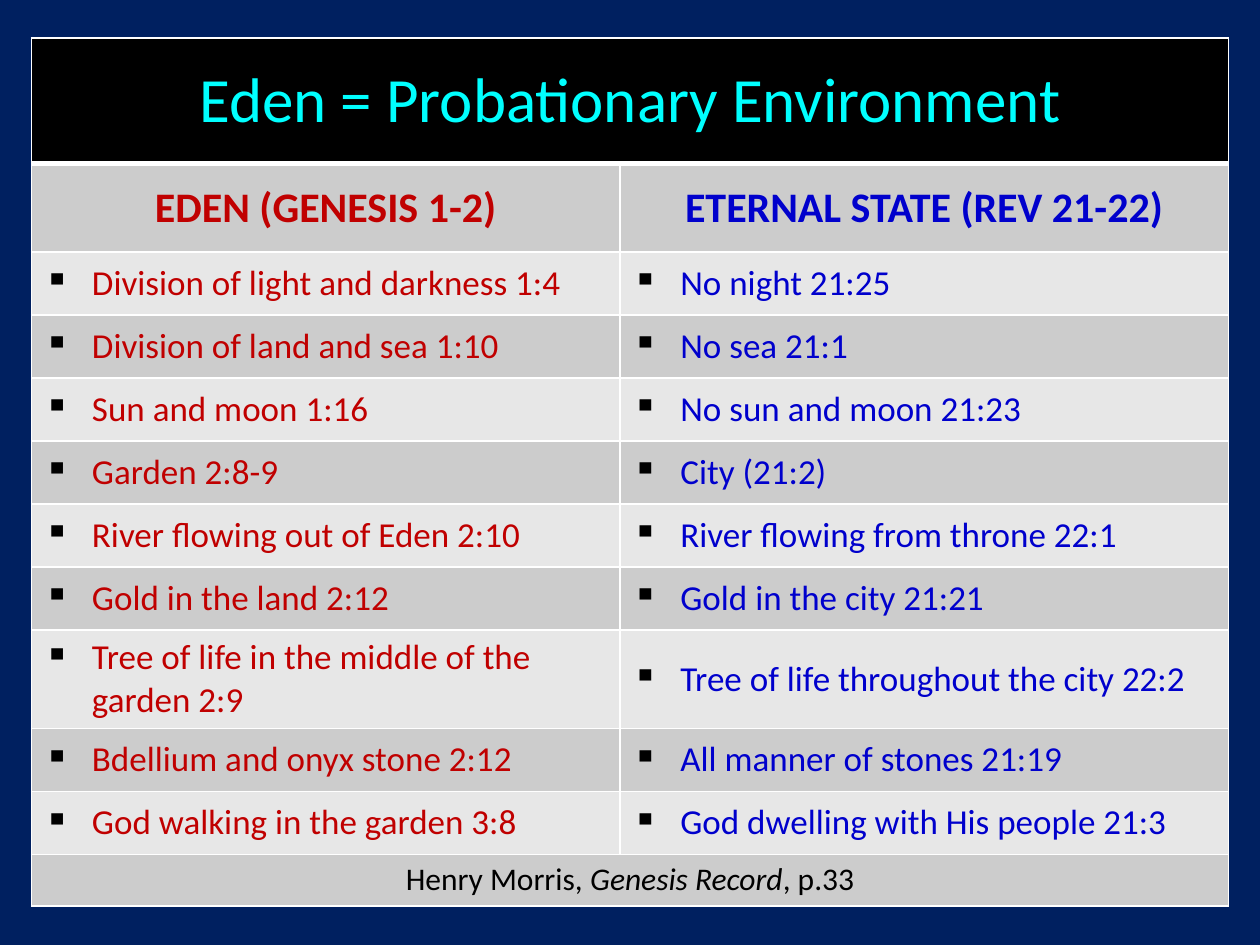
import pptx
import pptx.util
import pptx.dml.color
import pptx.enum.text
from lxml import etree
from pptx.oxml.ns import qn

Inches, Pt = pptx.util.Inches, pptx.util.Pt
ALIGN = pptx.enum.text.PP_ALIGN
MIDDLE = pptx.enum.text.MSO_ANCHOR.MIDDLE

# Content
TITLE = "Eden = Probationary Environment"
HEADS = ("EDEN (GENESIS 1-2)", "ETERNAL STATE (REV 21-22)")
PAIRS = [
    ("Division of light and darkness 1:4", "No night 21:25"),
    ("Division of land and sea 1:10", "No sea 21:1"),
    ("Sun and moon 1:16", "No sun and moon 21:23"),
    ("Garden 2:8-9", "City (21:2)"),
    ("River flowing out of Eden 2:10", "River flowing from throne 22:1"),
    ("Gold in the land 2:12", "Gold in the city 21:21"),
    ("Tree of life in the middle of the garden 2:9",
     "Tree of life throughout the city 22:2"),
    ("Bdellium and onyx stone 2:12", "All manner of stones 21:19"),
    ("God walking in the garden 3:8", "God dwelling with His people 21:3"),
]
SOURCE = (("Henry Morris, ", False), ("Genesis Record", True), (", p.33", False))

# Look
FONT = "Calibri"
INKS = ("C00000", "0000CC")
BANDS = ("E7E7E7", "CCCCCC")
WIDTHS = (4.67, 4.83)
HEIGHTS = [1, 0.7] + [0.5] * len(PAIRS) + [0.41]


def color(text):
    return pptx.dml.color.RGBColor.from_string(text)


def border(cell, below=1):
    props = cell._tc.get_or_add_tcPr()
    for spot, (side, width) in enumerate(
            (("lnL", 1), ("lnR", 1), ("lnT", 1), ("lnB", below))):
        line = etree.Element(qn("a:" + side), w=str(Pt(width)))
        fill = etree.SubElement(line, qn("a:solidFill"))
        etree.SubElement(fill, qn("a:srgbClr"), val="FFFFFF")
        props.insert(spot, line)


def bullet(para):
    props = para._p.get_or_add_pPr()
    props.set("marL", str(Inches(0.38)))
    props.set("indent", str(-Inches(0.38)))
    tint = etree.SubElement(props, qn("a:buClr"))
    etree.SubElement(tint, qn("a:srgbClr"), val="000000")
    etree.SubElement(props, qn("a:buChar"), char="▪")


def write(cell, parts, size, ink, bold=False, align=ALIGN.CENTER):
    para = cell.text_frame.paragraphs[0]
    para.alignment = align
    for text, slant in parts:
        run = para.add_run()
        run.text = text
        font = run.font
        font.name, font.size = FONT, Pt(size)
        font.bold, font.italic = bold, slant
        font.color.rgb = color(ink)
    return para


# Slide
deck = pptx.Presentation()
deck.slide_width, deck.slide_height = Inches(10), Inches(7.5)
slide = deck.slides.add_slide(deck.slide_layouts[6])
back = slide.background.fill
back.solid()
back.fore_color.rgb = color("002060")

# Table grid
frame = slide.shapes.add_table(len(HEIGHTS), 2, Inches(0.25), Inches(0.3),
                               Inches(sum(WIDTHS)), Inches(6.87))
table = frame.table
for col, width in zip(table.columns, WIDTHS):
    col.width = Inches(width)
for row, height in zip(table.rows, HEIGHTS):
    row.height = Inches(height)
frame.height = Inches(6.87)

# Fills and borders
last = len(HEIGHTS) - 1
for r in range(len(HEIGHTS)):
    for c in range(2):
        cell = table.cell(r, c)
        cell.fill.solid()
        cell.fill.fore_color.rgb = color(BANDS[r % 2] if r else "000000")
        if r < last:
            cell.vertical_anchor = MIDDLE
        border(cell, 1 if r else 3)
for r in (0, last):
    table.cell(r, 0).merge(table.cell(r, 1))

# Title, column heads and source
write(table.cell(0, 0), [(TITLE, False)], 36, "00FFFF")
for c, head in enumerate(HEADS):
    write(table.cell(1, c), [(head, False)], 24, INKS[c], bold=True)
write(table.cell(last, 0), SOURCE, 18, "000000")

# Compared points
for r, pair in enumerate(PAIRS, 2):
    for c, point in enumerate(pair):
        para = write(table.cell(r, c), [(point, False)], 20, INKS[c],
                     align=ALIGN.LEFT)
        if r < last - 1:
            para.space_after = Pt(12)
        bullet(para)

deck.save("out.pptx")
